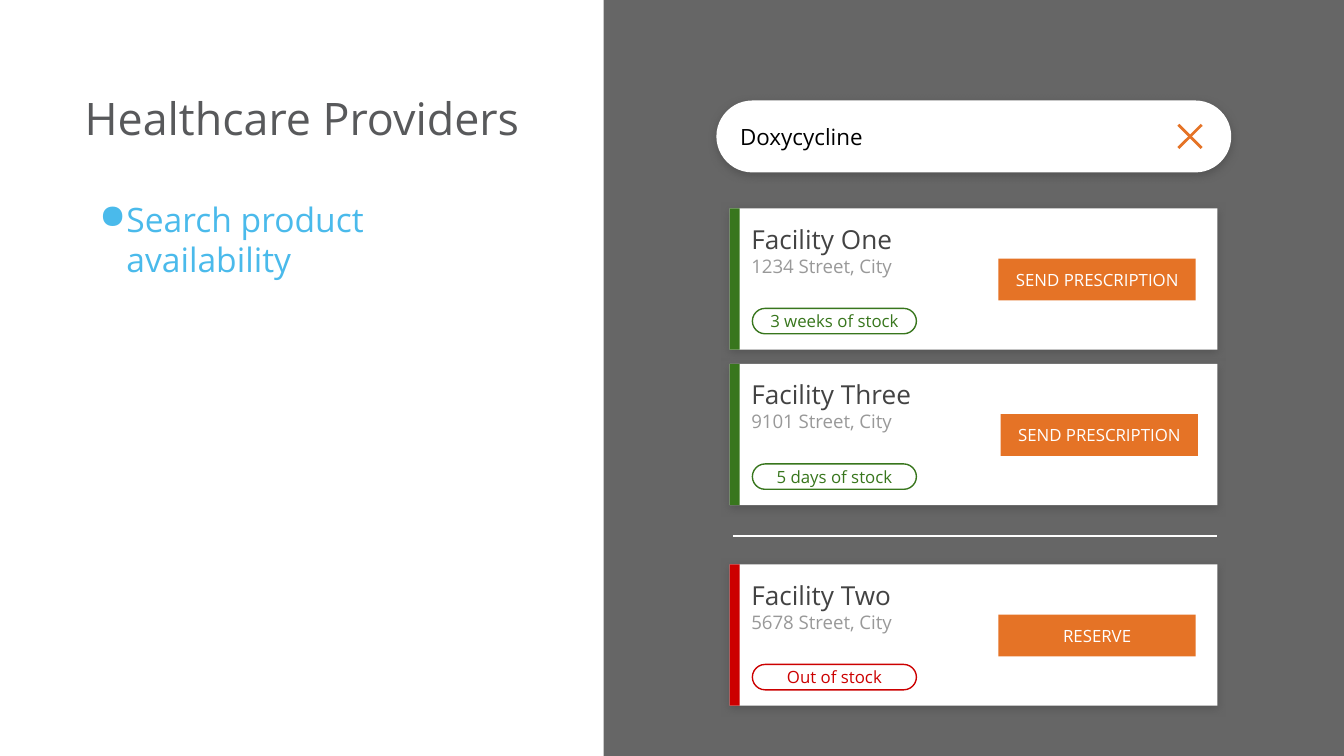
from lxml import etree
from pptx import Presentation
from pptx.dml.color import RGBColor
from pptx.enum.shapes import MSO_CONNECTOR, MSO_SHAPE
from pptx.enum.text import MSO_ANCHOR, PP_ALIGN
from pptx.oxml.ns import qn
from pptx.util import Cm, Pt

RECT, ROUNDED = MSO_SHAPE.RECTANGLE, MSO_SHAPE.ROUNDED_RECTANGLE
STRAIGHT = MSO_CONNECTOR.STRAIGHT
TOP, MIDDLE = MSO_ANCHOR.TOP, MSO_ANCHOR.MIDDLE
LEFT, CENTER = PP_ALIGN.LEFT, PP_ALIGN.CENTER

WHITE, BLACK, DARK, GREY = "FFFFFF", "000000", "434343", "999999"
PANEL, TITLE, SKY = "666666", "58595B", "4ABAEB"
ORANGE, GREEN, RED = "E57326", "38761D", "CC0000"


def color(value):
    return RGBColor.from_string(value)


def add_element(parent, tag, **attributes):
    return etree.SubElement(parent, qn(tag), attributes)


def add_shadow(box):
    """Give the box a soft shadow that falls straight down."""
    box.shadow.inherit = False
    effects = box._element.spPr.find(qn("a:effectLst"))
    shadow = add_element(effects, "a:outerShdw", blurRad=str(Pt(4.5)),
                         dist=str(Pt(1.5)), dir="5400000", algn="bl", rotWithShape="0")
    tint = add_element(shadow, "a:srgbClr", val=DARK)
    add_element(tint, "a:alpha", val="50000")


def add_bullet(para, sign, value):
    properties = para._p.get_or_add_pPr()
    properties.set("marL", str(Cm(0.51)))
    properties.set("indent", str(Cm(-0.69)))
    bullet_color = add_element(properties, "a:buClr")
    add_element(bullet_color, "a:srgbClr", val=value)
    add_element(properties, "a:buChar", char=sign)


class Page:
    """Holds the font, the current slide and the group being filled."""

    font = "Open Sans"

    def __init__(self, deck):
        self.slide = deck.slides.add_slide(deck.slide_layouts[6])
        self.shapes = self.slide.shapes

    def start_group(self):
        self.shapes = self.slide.shapes.add_group_shape().shapes

    def end_group(self):
        self.shapes = self.slide.shapes

    def span(self, para, text, size, ink):
        span = para.add_run()
        span.text = text
        span.font.name = self.font
        span.font.size = Pt(size)
        span.font.color.rgb = color(ink)

    def fill_text(self, box, text, size, ink, align=LEFT, anchor=TOP):
        frame = box.text_frame
        frame.word_wrap = True
        frame.vertical_anchor = anchor
        frame.margin_left = frame.margin_right = Cm(0.25)
        frame.margin_top = frame.margin_bottom = Cm(0.25)
        para = frame.paragraphs[0]
        para.alignment = align
        self.span(para, text, size, ink)
        return para

    def text(self, left, top, width, height, text, size, ink):
        box = self.shapes.add_textbox(Cm(left), Cm(top), Cm(width), Cm(height))
        return self.fill_text(box, text, size, ink)

    def box(self, left, top, width, height, kind=RECT, fill=None, line=None, shadow=False):
        box = self.shapes.add_shape(kind, Cm(left), Cm(top), Cm(width), Cm(height))
        box.shadow.inherit = False
        if kind == ROUNDED:
            box.adjustments[0] = 0.5
        if fill:
            box.fill.solid()
            box.fill.fore_color.rgb = color(fill)
        else:
            box.fill.background()
        if line:
            box.line.color.rgb = color(line)
            box.line.width = Pt(0.75)
        else:
            box.line.fill.background()
        if shadow:
            add_shadow(box)
        return box

    def line(self, x1, y1, x2, y2, ink):
        line = self.shapes.add_connector(STRAIGHT, Cm(x1), Cm(y1), Cm(x2), Cm(y2))
        line.line.color.rgb = color(ink)
        line.line.width = Pt(1.5)
        add_element(line._element.spPr, "a:effectLst")

    def search_field(self, text):
        self.start_group()
        field = self.box(13.54, 1.9, 9.73, 1.36, ROUNDED, fill=WHITE, shadow=True)
        self.fill_text(field, text, 12, BLACK, anchor=MIDDLE)
        left, right, top, bottom = 22.27, 22.71, 2.36, 2.8
        self.line(left, top, right, bottom, ORANGE)
        self.line(right, top, left, bottom, ORANGE)
        self.end_group()

    def card(self, top, name, address, stock, action, status, button_left=18.87, divider=None):
        """Draw one facility card, with an optional divider at the given height."""
        left, width, height = 13.79, 9.22, 2.67
        self.start_group()
        self.box(left, top, width, height, fill=WHITE, shadow=True)
        para = self.text(left + 0.16, top + 0.03, 6.32, 1.55, name, 14, DARK)
        para.add_line_break()
        self.span(para, address, 10, GREY)
        button = self.box(button_left, top + 0.95, 3.73, 0.79, fill=ORANGE)
        self.fill_text(button, action, 9, WHITE, CENTER, MIDDLE)
        self.box(left, top, 0.19, height, fill=status)
        if divider:
            self.line(left + 0.06, divider, left + width, divider, WHITE)
        pill = self.box(left + 0.43, top + 1.89, 3.1, 0.48, ROUNDED, line=status)
        self.fill_text(pill, stock, 9, status, CENTER, MIDDLE)
        self.end_group()


def main():
    deck = Presentation()
    deck.slide_width, deck.slide_height = Cm(25.4), Cm(14.29)
    page = Page(deck)

    page.box(11.41, 0, 13.99, 14.29, fill=PANEL)
    title = page.text(1.35, 1.32, 8.99, 1.73, "Healthcare Providers", 24, TITLE)
    title.line_spacing = 1.15
    title.space_after = Pt(16)

    page.search_field("Doxycycline")

    point = page.text(1.63, 3.51, 8.64, 8.31, "Search product availability", 18, SKY)
    point.space_before, point.space_after = Pt(10), Pt(16)
    add_bullet(point, "●", SKY)

    page.card(3.94, "Facility One", "1234 Street, City", "3 weeks of stock",
              "SEND PRESCRIPTION", GREEN)
    page.card(6.88, "Facility Three", "9101 Street, City", "5 days of stock",
              "SEND PRESCRIPTION", GREEN, button_left=18.91)
    page.card(10.67, "Facility Two", "5678 Street, City", "Out of stock",
              "RESERVE", RED, divider=10.13)

    deck.save("out.pptx")


if __name__ == "__main__":
    main()
